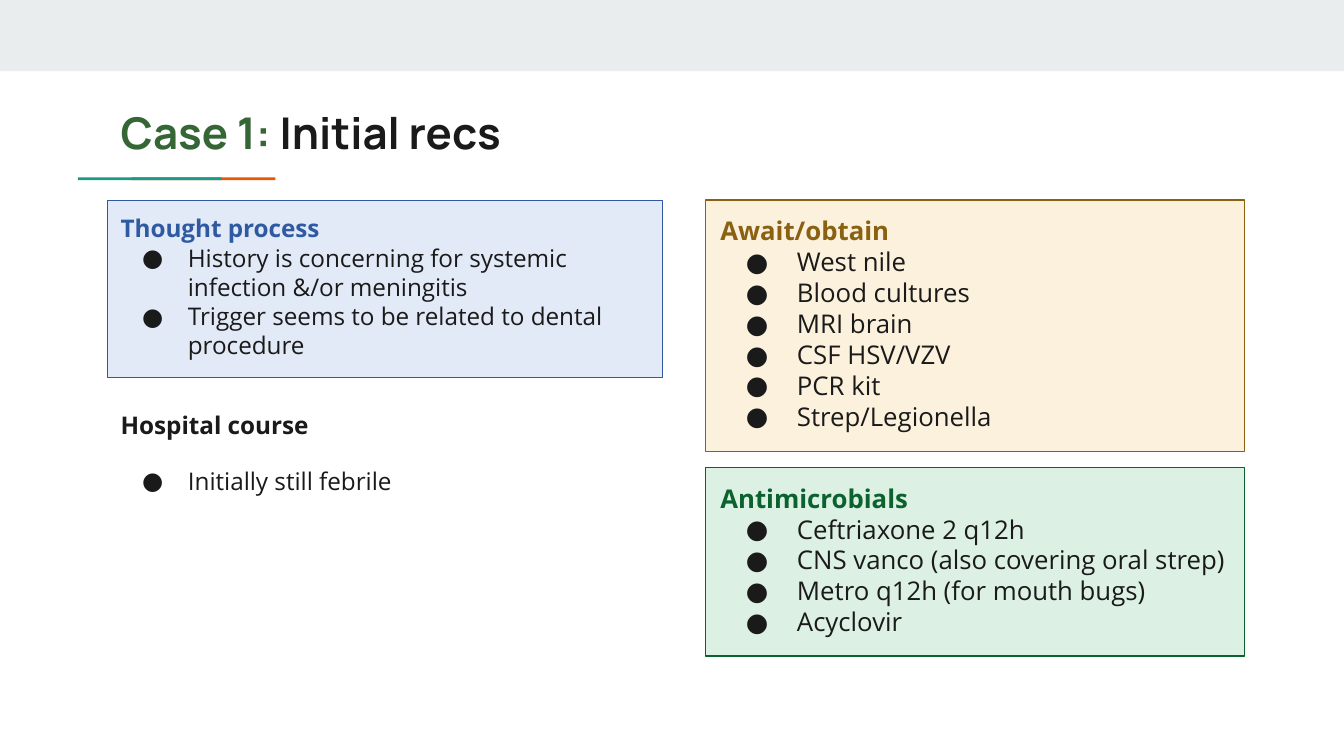
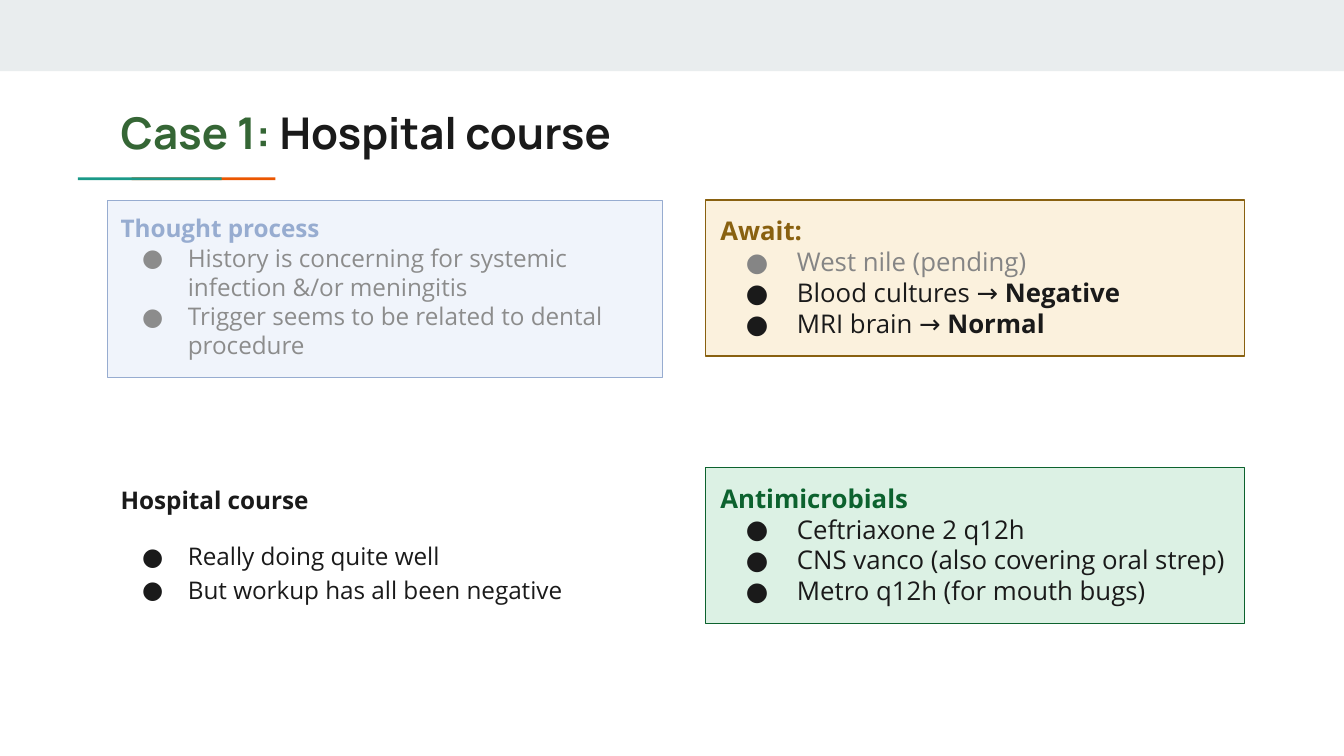
import pptx
import pptx.dml.color
import pptx.enum.shapes
import pptx.enum.text
import pptx.oxml.ns
import pptx.util
import lxml.etree
from dataclasses import dataclass

Inches = pptx.util.Inches
Pt = pptx.util.Pt
qn = pptx.oxml.ns.qn


# Theme: colours, fonts and type sizes
@dataclass(frozen=True)
class Theme:
    ink: str = "1A1A1A"
    grey: str = "858585"
    white: str = "FFFFFF"
    band: str = "E9EDEE"
    teal: str = "1A9988"
    orange: str = "EB5600"
    case: str = "356635"
    # Card styles: fill, accent, line width
    blue: tuple = ("E2EAF7", "2F5AA2", 0.75)
    gold: tuple = ("FBF1DD", "896110", 0.86)
    green: tuple = ("DCF1E4", "0C622E", 0.86)
    head: str = "Manrope"
    body: str = "Open Sans"
    title: float = 23.4
    left: float = 13
    right: float = 13.8


T = Theme()


# Content: a bullet is a list of (text, bold, colour) runs
def item(text, result="", color=T.ink):
    runs = [(text, False, color)]
    return runs + [(result, True, color)] if result else runs


THOUGHT = [
    item("History is concerning for systemic infection &/or meningitis"),
    item("Trigger seems to be related to dental procedure"),
]
DRUGS = [
    item("Ceftriaxone 2 q12h"),
    item("CNS vanco (also covering oral strep)"),
    item("Metro q12h (for mouth bugs)"),
]
SLIDES = [
    {
        "title": "Initial recs",
        "await": ("Await/obtain", [item(t) for t in (
            "West nile", "Blood cultures", "MRI brain", "CSF HSV/VZV",
            "PCR kit", "Strep/Legionella")], 1.87),
        "drugs": (DRUGS + [item("Acyclovir")], 1.4),
        "course": ([item("Initially still febrile")], 2.92),
        "faded": False,
    },
    {
        "title": "Hospital course",
        "await": ("Await:", [
            item("West nile (pending)", color=T.grey),
            item("Blood cultures → ", "Negative"),
            item("MRI brain → ", "Normal")], 1.16),
        "drugs": (DRUGS, 1.16),
        "course": ([item("Really doing quite well"),
                    item("But workup has all been negative")], 3.48),
        "faded": True,
    },
]

# Layout, in inches; the page is 16:9
WIDE = 10
HIGH = WIDE * 9 / 16
LEFT, LEFT_W = 0.8, 4.13
RIGHT, RIGHT_W = 5.25, 4.01
ROW1, ROW2, FOOT = 1.49, 3.48, 5.3
RULE_W = 1.07


def rgb(code):
    return pptx.dml.color.RGBColor.from_string(code)


def rect(slide, x, y, w, h, fill, line=None, width=0, alpha=None):
    box = slide.shapes.add_shape(
        pptx.enum.shapes.MSO_SHAPE.RECTANGLE,
        Inches(x), Inches(y), Inches(w), Inches(h))
    box.shadow.inherit = False
    box.fill.solid()
    box.fill.fore_color.rgb = rgb(fill)
    if line:
        box.line.color.rgb = rgb(line)
        box.line.width = Pt(width)
    else:
        box.line.fill.background()
    if alpha:
        clr = box._element.spPr.find(".//" + qn("a:srgbClr"))
        lxml.etree.SubElement(clr, qn("a:alpha")).set("val", str(alpha * 1000))
    return box


def bullet(para, color, font, edge, hang):
    props = para._p.get_or_add_pPr()
    props.set("marL", str(Inches(edge)))
    props.set("indent", str(-Inches(hang)))
    tint = lxml.etree.SubElement(props, qn("a:buClr"))
    lxml.etree.SubElement(tint, qn("a:srgbClr")).set("val", color)
    lxml.etree.SubElement(props, qn("a:buFont")).set("typeface", font)
    lxml.etree.SubElement(props, qn("a:buChar")).set("char", "●")


def write(box, lead, items=(), font=T.body, size=T.left, inset=0.1,
          indent=(0.5, 0.34), spacing=None, gap=0):
    """Fill a box with a lead line of runs, then bulleted lines."""
    frame = box.text_frame
    frame.word_wrap = True
    frame.vertical_anchor = pptx.enum.text.MSO_ANCHOR.TOP
    frame.margin_left = frame.margin_right = Inches(inset)
    frame.margin_top = frame.margin_bottom = Inches(inset)
    for i, runs in enumerate([lead, *items]):
        para = frame.add_paragraph() if i else frame.paragraphs[0]
        para.alignment = pptx.enum.text.PP_ALIGN.LEFT
        if spacing:
            para.line_spacing = spacing
        if i == 1 and gap:
            para.space_before = Pt(gap)
        if i:
            bullet(para, runs[0][2], font, *indent)
        for text, bold, color in runs:
            run = para.add_run()
            run.text = text
            run.font.name = font
            run.font.size = Pt(size)
            run.font.bold = bold
            run.font.color.rgb = rgb(color)


def area(slide, x, y, w, h):
    return slide.shapes.add_textbox(Inches(x), Inches(y), Inches(w), Inches(h))


def card(slide, head, items, style, x, y, w, h, **form):
    fill, accent, width = style
    box = rect(slide, x, y, w, h, fill, accent, width)
    write(box, [(head, True, accent)], items, **form)


def top(slide, title):
    # Top band, two-tone rule and title
    rect(slide, 0, 0, WIDE, 0.53, T.band)
    for x, color in ((0.98, T.orange), (0.58, T.teal)):
        rect(slide, x, 1.32, RULE_W, 0.02, color)
    write(area(slide, LEFT, 0.69, 8.41, 0.59),
          [("Case 1:", True, T.case), (" " + title, True, T.ink)],
          font=T.head, size=T.title)


def build(deck, data):
    slide = deck.slides.add_slide(deck.slide_layouts[6])
    top(slide, data["title"])

    # Hospital course
    items, y = data["course"]
    write(area(slide, LEFT, y, LEFT_W, FOOT - y),
          [("Hospital course", True, T.ink)], items, spacing=1.15, gap=12)

    # Right-hand cards
    form = dict(size=T.right, inset=0.11, indent=(0.57, 0.38))
    items, high = data["drugs"]
    card(slide, "Antimicrobials", items, T.green,
         RIGHT, ROW2, RIGHT_W, high, **form)
    head, items, high = data["await"]
    card(slide, head, items, T.gold, RIGHT, ROW1, RIGHT_W, high, **form)

    # Thought process, veiled once it is past
    card(slide, "Thought process", THOUGHT, T.blue, LEFT, ROW1, LEFT_W, 1.32)
    if data["faded"]:
        rect(slide, 0.7, 1.44, 4.3, 1.44, T.white, alpha=50)


def main():
    deck = pptx.Presentation()
    deck.slide_width, deck.slide_height = Inches(WIDE), Inches(HIGH)
    for data in SLIDES:
        build(deck, data)
    deck.save("out.pptx")


if __name__ == "__main__":
    main()
